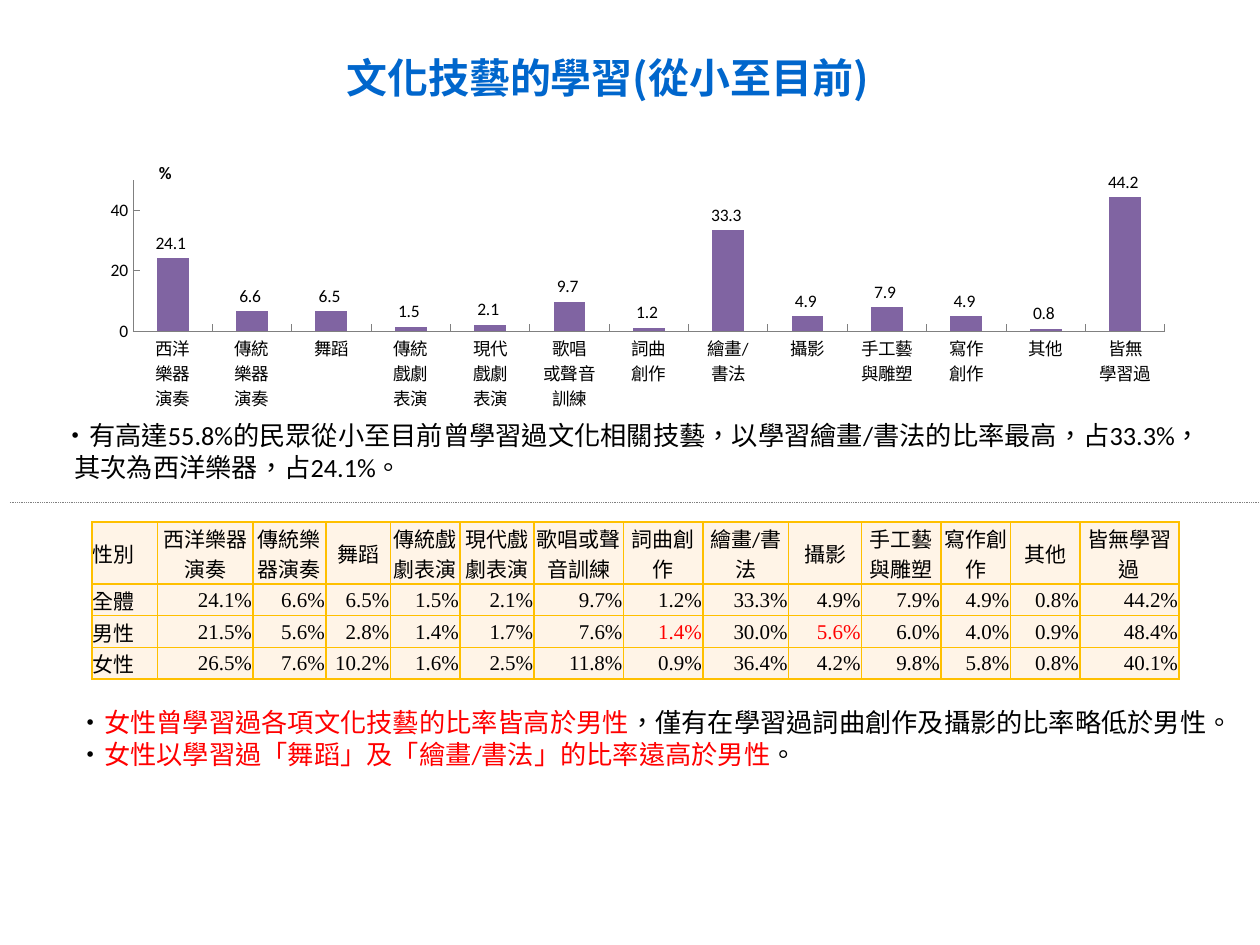
from dataclasses import dataclass
from typing import Any

from lxml import etree
from pptx import Presentation
from pptx.chart.data import CategoryChartData
from pptx.dml.color import RGBColor
from pptx.enum.chart import XL_CHART_TYPE, XL_LABEL_POSITION, XL_TICK_MARK
from pptx.enum.dml import MSO_LINE
from pptx.enum.shapes import MSO_CONNECTOR
from pptx.enum.text import MSO_ANCHOR, PP_ALIGN
from pptx.oxml.ns import qn
from pptx.util import Cm, Pt

COLUMN = XL_CHART_TYPE.COLUMN_CLUSTERED
ABOVE_BAR = XL_LABEL_POSITION.OUTSIDE_END
TICK_IN = XL_TICK_MARK.INSIDE
TICK_NONE = XL_TICK_MARK.NONE
DOTTED = MSO_LINE.ROUND_DOT
STRAIGHT = MSO_CONNECTOR.STRAIGHT
TOP, MIDDLE = MSO_ANCHOR.TOP, MSO_ANCHOR.MIDDLE
LEFT, CENTER, RIGHT, JUSTIFY = PP_ALIGN.LEFT, PP_ALIGN.CENTER, PP_ALIGN.RIGHT, PP_ALIGN.JUSTIFY


@dataclass(frozen=True)
class Theme:
    heading: RGBColor = RGBColor(0x00, 0x66, 0xCC)
    ink: RGBColor = RGBColor(0, 0, 0)
    accent: RGBColor = RGBColor(0xFF, 0, 0)
    bar: RGBColor = RGBColor(0x80, 0x64, 0xA2)
    rule: RGBColor = RGBColor(0x80, 0x80, 0x80)
    cell: RGBColor = RGBColor(0xFF, 0xF4, 0xE7)
    border: str = "FFC000"
    heading_font: str = "Noto Sans CJK SC"
    body_font: str = "Calibri"
    figure_font: str = "Times New Roman"
    heading_size: Pt = Pt(23.4)
    body_size: Pt = Pt(15)
    table_size: Pt = Pt(12)
    chart_size: Pt = Pt(10)


THEME = Theme()


@dataclass(frozen=True)
class Box:
    left: float
    top: float
    width: float
    height: float

    def lengths(self) -> tuple:
        return Cm(self.left), Cm(self.top), Cm(self.width), Cm(self.height)


@dataclass(frozen=True)
class Span:
    text: str
    color: RGBColor = THEME.ink


@dataclass(frozen=True)
class Statement:
    spans: tuple
    align: Any = LEFT


@dataclass(frozen=True)
class Skill:
    name: str
    axis_label: str
    column_width: float
    overall: float
    male: float
    female: float


SKILLS = (
    Skill("西洋樂器演奏", "西洋\n樂器\n演奏", 1.93, 24.1, 21.5, 26.5),
    Skill("傳統樂器演奏", "傳統\n樂器\n演奏", 1.47, 6.6, 5.6, 7.6),
    Skill("舞蹈", "舞蹈", 1.3, 6.5, 2.8, 10.2),
    Skill("傳統戲劇表演", "傳統\n戲劇\n表演", 1.4, 1.5, 1.4, 1.6),
    Skill("現代戲劇表演", "現代\n戲劇\n表演", 1.5, 2.1, 1.7, 2.5),
    Skill("歌唱或聲音訓練", "歌唱\n或聲音\n訓練", 1.8, 9.7, 7.6, 11.8),
    Skill("詞曲創作", "詞曲\n創作", 1.6, 1.2, 1.4, 0.9),
    Skill("繪畫/書法", "繪畫/\n書法", 1.73, 33.3, 30.0, 36.4),
    Skill("攝影", "攝影", 1.47, 4.9, 5.6, 4.2),
    Skill("手工藝與雕塑", "手工藝\n與雕塑", 1.6, 7.9, 6.0, 9.8),
    Skill("寫作創作", "寫作\n創作", 1.4, 4.9, 4.0, 5.8),
    Skill("其他", "其他", 1.4, 0.8, 0.9, 0.8),
    Skill("皆無學習過", "皆無\n學習過", 2.0, 44.2, 48.4, 40.1),
)
MALE_LEADS = {"詞曲創作", "攝影"}
GENDERS = {"全體": "overall", "男性": "male", "女性": "female"}
GENDER_WIDTH = 1.32
HEADER_HEIGHT, ROW_HEIGHT = 1.25, 0.64

SUMMARY = (Statement((Span("•有高達55.8%的民眾從小至目前曾學習過文化相關技藝，以學習繪畫/書法的比率最高，占33.3%，其次為西洋樂器，占24.1%。"),)),)
GENDER_FINDINGS = (
    Statement((Span("•"), Span("女性曾學習過各項文化技藝的比率皆高於男性", THEME.accent),
               Span("，僅有在學習過詞曲創作及攝影的比率略低於男性。"))),
    Statement((Span("•"), Span("女性以學習過「舞蹈」及「繪畫/書法」的比率遠高於男性", THEME.accent),
               Span("。")), JUSTIFY),
)


def set_all(target: Any, values: dict) -> None:
    for attribute, value in values.items():
        setattr(target, attribute, value)


def add_span(paragraph: Any, span: Span, values: dict) -> Any:
    run = paragraph.add_run()
    run.text = span.text
    set_all(run.font, values)
    run.font.color.rgb = span.color
    properties = run.font._element
    properties.set("lang", "zh-TW")
    return properties


def add_title(slide: Any, text: str, box: Box) -> None:
    frame = slide.shapes.add_textbox(*box.lengths()).text_frame
    set_all(frame, {"word_wrap": True, "vertical_anchor": MIDDLE})
    heading = frame.paragraphs[0]
    heading.alignment = CENTER
    properties = add_span(heading, Span(text, THEME.heading), {
        "name": THEME.heading_font, "size": THEME.heading_size, "bold": True})
    etree.SubElement(properties, qn("a:ea"), typeface=THEME.heading_font)


def add_statements(slide: Any, statements: tuple, box: Box) -> None:
    frame = slide.shapes.add_textbox(*box.lengths()).text_frame
    set_all(frame, {"word_wrap": True, "vertical_anchor": TOP})
    for index, statement in enumerate(statements):
        paragraph = frame.add_paragraph() if index else frame.paragraphs[0]
        paragraph.alignment = statement.align
        hanging = paragraph._p.get_or_add_pPr()
        hanging.set("marL", str(Cm(0.23)))
        hanging.set("indent", str(-Cm(0.23)))
        for span in statement.spans:
            add_span(paragraph, span, {"name": THEME.body_font, "size": THEME.body_size})


def add_divider(slide: Any, left: float, right: float, top: float) -> None:
    divider = slide.shapes.add_connector(STRAIGHT, Cm(left), Cm(top), Cm(right), Cm(top))
    set_all(divider.line, {"width": Pt(0.5), "dash_style": DOTTED})
    divider.line.color.rgb = THEME.rule
    etree.SubElement(divider._element.spPr, qn("a:effectLst"))


def add_layout(parent: Any, position: int, values: dict) -> None:
    for old in parent.findall(qn("c:layout")):
        parent.remove(old)
    layout = etree.Element(qn("c:layout"))
    manual = etree.SubElement(layout, qn("c:manualLayout"))
    for tag, value in values.items():
        etree.SubElement(manual, qn(f"c:{tag}"), val=str(value))
    parent.insert(position, layout)


def add_rate_chart(slide: Any, box: Box) -> None:
    rates = CategoryChartData()
    rates.categories = [skill.axis_label for skill in SKILLS]
    rates.add_series("全體", [skill.overall for skill in SKILLS])
    chart = slide.shapes.add_chart(COLUMN, *box.lengths(), rates).chart
    set_all(chart, {"has_legend": False, "has_title": False})
    set_all(chart.font, {"name": THEME.body_font, "size": THEME.chart_size})
    chart.font.color.rgb = THEME.ink

    bars = chart.plots[0]
    set_all(bars, {"gap_width": 150, "vary_by_categories": False, "has_data_labels": True})
    set_all(bars.data_labels, {
        "show_value": True, "position": ABOVE_BAR,
        "number_format": r"#,##0.0_);[Red]\(#,##0.0\)", "number_format_is_linked": False})
    fill = bars.series[0].format.fill
    fill.solid()
    fill.fore_color.rgb = THEME.bar

    scale = chart.value_axis
    set_all(scale, {"minimum_scale": 0, "maximum_scale": 50, "major_unit": 20})
    for axis in (chart.category_axis, scale):
        set_all(axis, {"has_major_gridlines": False, "major_tick_mark": TICK_IN,
                       "minor_tick_mark": TICK_NONE})
        axis.format.line.color.rgb = THEME.rule
        axis.format.line.width = Pt(0.5)
    set_all(scale.tick_labels, {"number_format": "0", "number_format_is_linked": False})

    unit = scale.axis_title
    unit.text_frame.text = "%"
    unit.text_frame._txBody.bodyPr.set("rot", "0")
    unit.text_frame._txBody.bodyPr.set("vert", "horz")
    unit_font = unit.text_frame.paragraphs[0].runs[0].font
    set_all(unit_font, {"name": THEME.body_font, "size": THEME.chart_size, "bold": True})
    add_layout(unit._element, 1, {"xMode": "edge", "yMode": "edge", "x": 0.066, "y": 0})
    add_layout(chart._chartSpace.chart.plotArea, 0, {
        "layoutTarget": "inner", "xMode": "edge", "yMode": "edge",
        "x": 0.045, "y": 0.083, "w": 0.955, "h": 0.595})


def fill_cell(cell: Any, span: Span, align: Any, font_name: str) -> None:
    set_all(cell, {"margin_left": Cm(0.02), "margin_right": Cm(0.02), "margin_top": Cm(0.02),
                   "margin_bottom": 0, "vertical_anchor": MIDDLE})
    paragraph = cell.text_frame.paragraphs[0]
    paragraph.alignment = align
    add_span(paragraph, span, {"name": font_name, "size": THEME.table_size})
    properties = cell._tc.get_or_add_tcPr()
    for side in ("lnL", "lnR", "lnT", "lnB"):
        border = etree.SubElement(properties, qn(f"a:{side}"), w=str(Pt(1)))
        paint = etree.SubElement(border, qn("a:solidFill"))
        etree.SubElement(paint, qn("a:srgbClr"), val=THEME.border)
    cell.fill.solid()
    cell.fill.fore_color.rgb = THEME.cell


def add_gender_table(slide: Any, left: float, top: float) -> None:
    widths = [GENDER_WIDTH] + [skill.column_width for skill in SKILLS]
    heights = [HEADER_HEIGHT] + [ROW_HEIGHT] * len(GENDERS)
    box = Box(left, top, sum(widths), sum(heights))
    table = slide.shapes.add_table(len(heights), len(widths), *box.lengths()).table
    set_all(table, {"first_row": False, "horz_banding": False})
    for column, width in zip(table.columns, widths):
        column.width = Cm(width)
    for row, height in zip(table.rows, heights):
        row.height = Cm(height)
    fill_cell(table.cell(0, 0), Span("性別"), LEFT, THEME.body_font)
    for row, gender in enumerate(GENDERS, 1):
        fill_cell(table.cell(row, 0), Span(gender), LEFT, THEME.body_font)
    for column, skill in enumerate(SKILLS, 1):
        fill_cell(table.cell(0, column), Span(skill.name), CENTER, THEME.body_font)
        for row, group in enumerate(GENDERS.values(), 1):
            marked = group == "male" and skill.name in MALE_LEADS
            rate = Span(f"{getattr(skill, group):.1f}%", THEME.accent if marked else THEME.ink)
            fill_cell(table.cell(row, column), rate, RIGHT, THEME.figure_font)


def main() -> None:
    deck = Presentation()
    set_all(deck, {"slide_width": Cm(25.4), "slide_height": Cm(19.05)})
    slide = deck.slides.add_slide(deck.slide_layouts[6])
    add_title(slide, "文化技藝的學習(從小至目前)", Box(3.76, 0.91, 16.97, 1.27))
    add_statements(slide, SUMMARY, Box(1.02, 8.33, 23.6, 1.52))
    add_divider(slide, 0.2, 25.6, 10.13)
    add_gender_table(slide, 1.85, 10.52)
    add_statements(slide, GENDER_FINDINGS, Box(1.32, 14.12, 23.6, 1.8))
    add_rate_chart(slide, Box(1.7, 3.2, 21.79, 5.13))
    deck.save("out.pptx")


if __name__ == "__main__":
    main()
